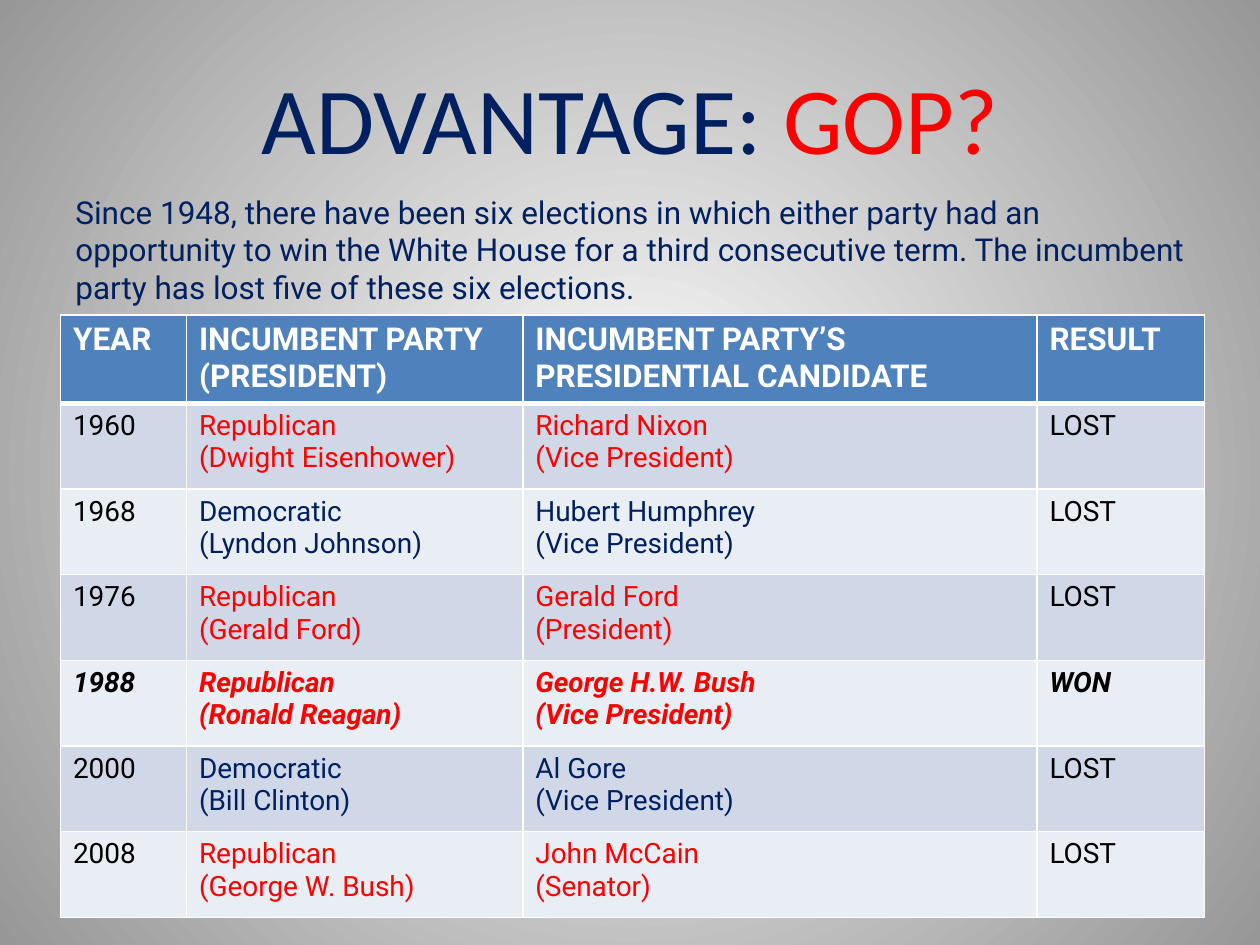
import pptx
import pptx.dml.color
import pptx.enum.text
import pptx.oxml
import pptx.oxml.ns
import pptx.util
from pptx.util import Inches

NAVY = pptx.dml.color.RGBColor(0x00, 0x20, 0x60)
RED = pptx.dml.color.RGBColor(0xFF, 0x00, 0x00)
BLACK = pptx.dml.color.RGBColor(0x00, 0x00, 0x00)
WHITE = pptx.dml.color.RGBColor(0xFF, 0xFF, 0xFF)
GRAY = pptx.dml.color.RGBColor(0x97, 0x97, 0x97)
HEADER_BLUE = pptx.dml.color.RGBColor(0x4F, 0x81, 0xBD)
BAND_DARK = pptx.dml.color.RGBColor(0xD0, 0xD8, 0xE8)
BAND_LIGHT = pptx.dml.color.RGBColor(0xE9, 0xED, 0xF4)

PARTY_COLORS = {"Republican": RED, "Democratic": NAVY}
INTRO = (
    "Since 1948, there have been six elections in which either party had an "
    "opportunity to win the White House for a third consecutive term. "
    "The incumbent party has lost five of these six elections."
)
HEADERS = [
    ["YEAR"],
    ["INCUMBENT PARTY", "(PRESIDENT)"],
    ["INCUMBENT PARTY’S PRESIDENTIAL CANDIDATE"],
    ["RESULT"],
]
# Year, party, president, candidate, candidate's office, result
ELECTIONS = [
    ("1960", "Republican", "Dwight Eisenhower", "Richard Nixon", "Vice President", "LOST"),
    ("1968", "Democratic", "Lyndon Johnson", "Hubert Humphrey", "Vice President", "LOST"),
    ("1976", "Republican", "Gerald Ford", "Gerald Ford", "President", "LOST"),
    ("1988", "Republican", "Ronald Reagan", "George H.W. Bush", "Vice President", "WON"),
    ("2000", "Democratic", "Bill Clinton", "Al Gore", "Vice President", "LOST"),
    ("2008", "Republican", "George W. Bush", "John McCain", "Senator", "LOST"),
]
COLUMN_WIDTHS = [1, 2.67, 4.08, 1.33]
ROW_HEIGHT = 0.68


def set_font(font, name, size, color, bold=False, italic=False):
    font.name = name
    font.size = pptx.util.Pt(size)
    font.color.rgb = color
    font.bold = bold
    font.italic = italic


def place(shape, left, top, width, height):
    shape.left, shape.top = Inches(left), Inches(top)
    shape.width, shape.height = Inches(width), Inches(height)


def set_background(slide):
    """Radial gradient, white in the centre."""
    fill = slide.background.fill
    fill.gradient()
    for stop, color in zip(fill.gradient_stops, (WHITE, GRAY)):
        stop.color.rgb = color
    linear = slide.element.find(".//" + pptx.oxml.ns.qn("a:lin"))
    radial = pptx.oxml.parse_xml(
        f'<a:path {pptx.oxml.ns.nsdecls("a")} path="circle">'
        '<a:fillToRect l="50000" t="50000" r="50000" b="50000"/></a:path>'
    )
    linear.getparent().replace(linear, radial)


def add_title(slide):
    title = slide.shapes.title
    place(title, 0.5, 0.3, 9, 1.25)
    title.text_frame.vertical_anchor = pptx.enum.text.MSO_ANCHOR.MIDDLE
    paragraph = title.text_frame.paragraphs[0]
    paragraph.alignment = pptx.enum.text.PP_ALIGN.CENTER
    for text, color in (("ADVANTAGE: ", NAVY), ("GOP?", RED)):
        run = paragraph.add_run()
        run.text = text
        set_font(run.font, "Calibri", 54, color)


def add_intro(slide):
    box = slide.shapes.add_textbox(Inches(0.5), Inches(1.48), Inches(9.08), Inches(1.62))
    box.text_frame.word_wrap = True
    paragraph = box.text_frame.paragraphs[0]
    paragraph.text = INTRO
    set_font(paragraph.font, "Roboto", 18, NAVY)


def set_borders(cell, bottom_width):
    properties = cell._tc.get_or_add_tcPr()
    widths = {"lnL": 1, "lnR": 1, "lnT": 1, "lnB": bottom_width}
    for index, (side, width) in enumerate(widths.items()):
        properties.insert(index, pptx.oxml.parse_xml(
            f'<a:{side} {pptx.oxml.ns.nsdecls("a")} w="{pptx.util.Pt(width)}">'
            f'<a:solidFill><a:srgbClr val="{WHITE}"/></a:solidFill></a:{side}>'
        ))


def fill_cell(cell, lines, background, size, color, bold=False, italic=False, bottom_width=1):
    cell.fill.solid()
    cell.fill.fore_color.rgb = background
    set_borders(cell, bottom_width)
    cell.text_frame.text = "\n".join(lines)
    for paragraph in cell.text_frame.paragraphs:
        set_font(paragraph.font, "Roboto", size, color, bold, italic)


def add_election_table(slide):
    row_count = len(ELECTIONS) + 1
    table = slide.shapes.add_table(
        row_count, len(COLUMN_WIDTHS), Inches(0.48), Inches(2.5),
        Inches(sum(COLUMN_WIDTHS)), Inches(ROW_HEIGHT * row_count),
    ).table
    for column, width in zip(table.columns, COLUMN_WIDTHS):
        column.width = Inches(width)
    for row in table.rows:
        row.height = Inches(ROW_HEIGHT)

    # Header row
    for index, lines in enumerate(HEADERS):
        fill_cell(table.cell(0, index), lines, HEADER_BLUE, 18, WHITE,
                  bold=True, bottom_width=3)

    # One banded row per election, the single win emphasised
    for row, election in enumerate(ELECTIONS, start=1):
        year, party, president, candidate, office, result = election
        background = BAND_DARK if row % 2 else BAND_LIGHT
        party_color = PARTY_COLORS[party]
        won = result == "WON"
        contents = [
            ([year], BLACK),
            ([party, f"({president})"], party_color),
            ([candidate, f"({office})"], party_color),
            ([result], BLACK),
        ]
        for index, (lines, color) in enumerate(contents):
            fill_cell(table.cell(row, index), lines, background, 16, color,
                      bold=won, italic=won)


def main():
    presentation = pptx.Presentation()
    presentation.slide_width = Inches(10)
    presentation.slide_height = Inches(7.5)
    title_only = presentation.slide_layouts[5]
    slide = presentation.slides.add_slide(title_only)
    set_background(slide)
    add_title(slide)
    add_intro(slide)
    add_election_table(slide)
    presentation.save("out.pptx")


if __name__ == "__main__":
    main()
